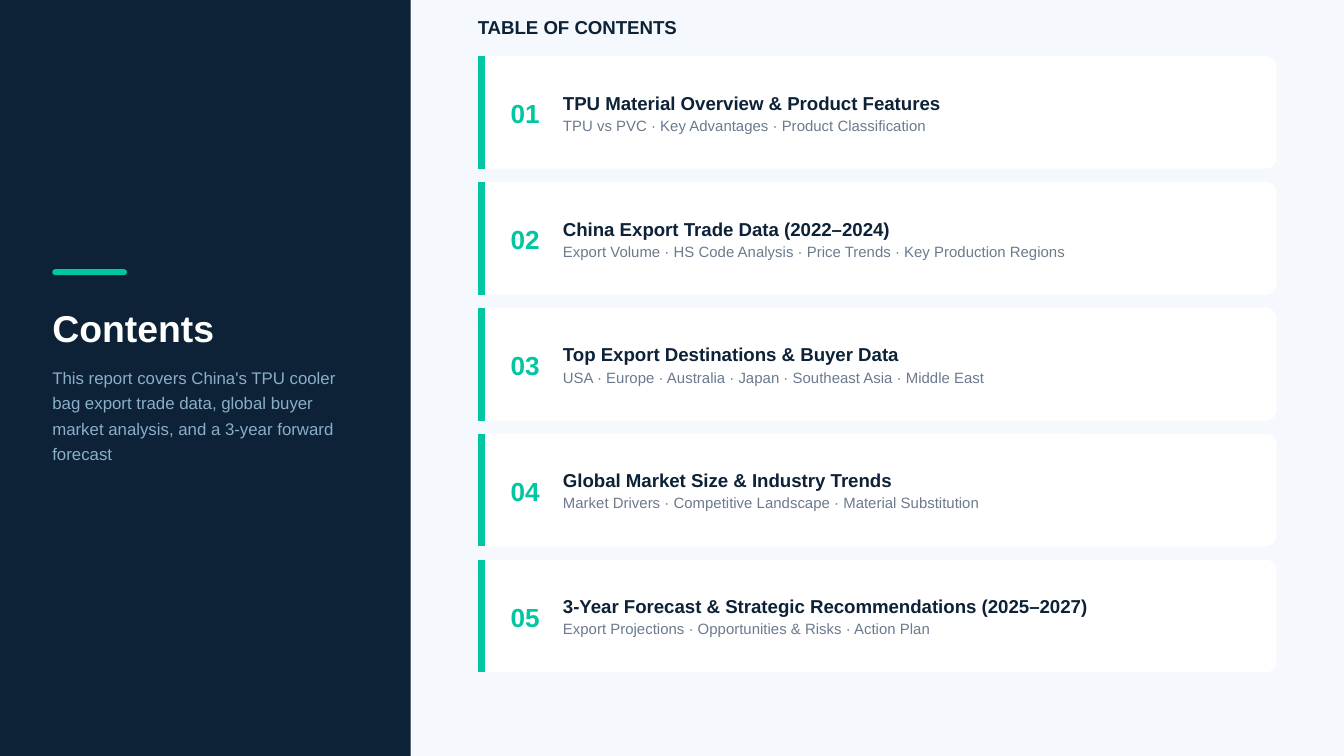
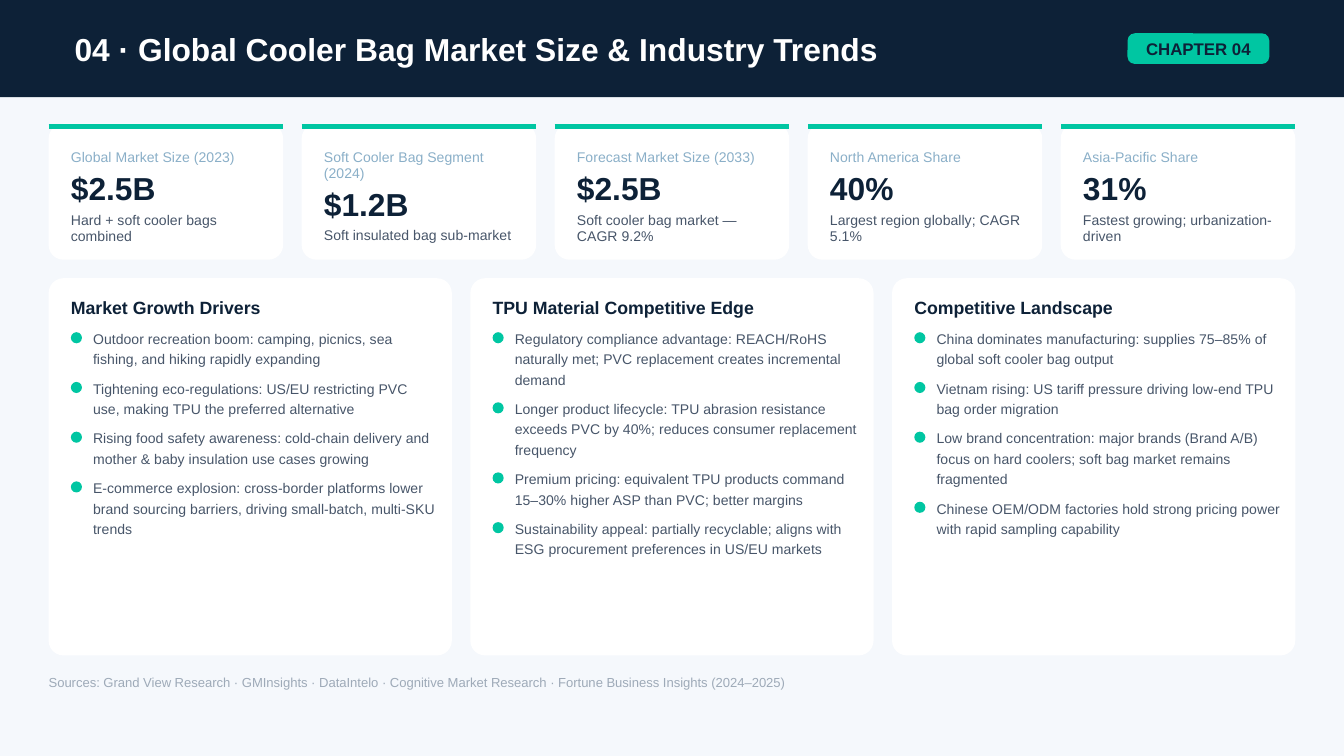
import collections

import lxml.etree
import pptx
import pptx.dml.color
import pptx.enum.shapes
import pptx.oxml.ns
import pptx.util

Cm = pptx.util.Cm
Pt = pptx.util.Pt
Area = collections.namedtuple("Area", "left top width height")

FONT = "Arial"
NAVY, TEAL, WHITE, PALE = "0D2137", "00C6A2", "FFFFFF", "F5F8FC"
SKY, SLATE, GREY, MIST = "8AAFC8", "475569", "6B7A8D", "9EAAB8"
SLIDE = Area(0, 0, 25.4, 14.29)

# Title, topics, width of the text column
CHAPTERS = [
    ("TPU Material Overview & Product Features",
     "TPU vs PVC · Key Advantages · Product Classification", 7.3),
    ("China Export Trade Data (2022–2024)",
     "Export Volume · HS Code Analysis · Price Trends · Key Production Regions", 9.65),
    ("Top Export Destinations & Buyer Data",
     "USA · Europe · Australia · Japan · Southeast Asia · Middle East", 8.1),
    ("Global Market Size & Industry Trends",
     "Market Drivers · Competitive Landscape · Material Substitution", 8),
    ("3-Year Forecast & Strategic Recommendations (2025–2027)",
     "Export Projections · Opportunities & Risks · Action Plan", 10.13),
]

# Label, label lines, value, note, note lines
STATS = [
    ("Global Market Size (2023)", 1, "$2.5B", "Hard + soft cooler bags combined", 2),
    ("Soft Cooler Bag Segment (2024)", 2, "$1.2B", "Soft insulated bag sub-market", 1),
    ("Forecast Market Size (2033)", 1, "$2.5B", "Soft cooler bag market — CAGR 9.2%", 2),
    ("North America Share", 1, "40%", "Largest region globally; CAGR 5.1%", 2),
    ("Asia-Pacific Share", 1, "31%", "Fastest growing; urbanization-driven", 2),
]

# Heading, then each point with its number of lines
PANELS = [
    ("Market Growth Drivers", [
        ("Outdoor recreation boom: camping, picnics, sea fishing, and hiking "
         "rapidly expanding", 2),
        ("Tightening eco-regulations: US/EU restricting PVC use, making TPU "
         "the preferred alternative", 2),
        ("Rising food safety awareness: cold-chain delivery and mother & baby "
         "insulation use cases growing", 2),
        ("E-commerce explosion: cross-border platforms lower brand sourcing "
         "barriers, driving small-batch, multi-SKU trends", 3),
    ]),
    ("TPU Material Competitive Edge", [
        ("Regulatory compliance advantage: REACH/RoHS naturally met; PVC "
         "replacement creates incremental demand", 3),
        ("Longer product lifecycle: TPU abrasion resistance exceeds PVC by 40%; "
         "reduces consumer replacement frequency", 3),
        ("Premium pricing: equivalent TPU products command 15–30% higher ASP "
         "than PVC; better margins", 2),
        ("Sustainability appeal: partially recyclable; aligns with ESG "
         "procurement preferences in US/EU markets", 2),
    ]),
    ("Competitive Landscape", [
        ("China dominates manufacturing: supplies 75–85% of global soft cooler "
         "bag output", 2),
        ("Vietnam rising: US tariff pressure driving low-end TPU bag order "
         "migration", 2),
        ("Low brand concentration: major brands (Brand A/B) focus on hard "
         "coolers; soft bag market remains fragmented", 3),
        ("Chinese OEM/ODM factories hold strong pricing power with rapid "
         "sampling capability", 2),
    ]),
]


def color(value):
    return pptx.dml.color.RGBColor.from_string(value)


def inside(area, left, top, width, height):
    """Return an area whose corner is measured from the corner of another."""
    return Area(area.left + left, area.top + top, width, height)


def columns(area, count, gap):
    width = (area.width - gap * (count - 1)) / count
    return [inside(area, i * (width + gap), 0, width, area.height) for i in range(count)]


def add_text(page, area, text, size=7.5, ink=SLATE, bold=False, leading=None, wrap=True):
    box = page.shapes.add_textbox(*map(Cm, area))
    frame = box.text_frame
    frame.word_wrap = wrap
    frame.margin_left = frame.margin_right = frame.margin_top = frame.margin_bottom = 0
    para = frame.paragraphs[0]
    if leading:
        para.line_spacing = Pt(leading)
    span = para.add_run()
    span.text = text
    span.font.name = FONT
    span.font.size = Pt(size)
    span.font.bold = bold
    span.font.color.rgb = color(ink)


def add_block(page, area, fill, radius=0):
    kinds = pptx.enum.shapes.MSO_SHAPE
    kind = kinds.ROUNDED_RECTANGLE if radius else kinds.RECTANGLE
    shape = page.shapes.add_shape(kind, *map(Cm, area))
    if radius:
        shape.adjustments[0] = min(0.5, radius / min(area.width, area.height))
    shape.shadow.inherit = False
    shape.fill.solid()
    shape.fill.fore_color.rgb = color(fill)
    shape.line.fill.background()


def add_accent_line(page, start, end, weight):
    straight = pptx.enum.shapes.MSO_CONNECTOR.STRAIGHT
    line = page.shapes.add_connector(straight, *map(Cm, start + end))
    line.line.color.rgb = color(TEAL)
    line.line.width = Pt(weight)
    effects = pptx.oxml.ns.qn("a:effectLst")
    lxml.etree.SubElement(line._element.spPr, effects)


def add_page(deck):
    page = deck.slides.add_slide(deck.slide_layouts[6])
    page.background.fill.solid()
    page.background.fill.fore_color.rgb = color(PALE)
    return page


def intro_panel(page, area):
    add_block(page, area, NAVY)
    add_block(page, inside(area, 0.99, 5.09, 1.41, 0.11), TEAL, radius=0.07)
    add_text(page, inside(area, 0.99, 5.76, 5.9, 0.81), "Contents",
             size=20, ink=WHITE, bold=True)
    add_text(page, inside(area, 0.99, 6.86, 5.9, 1.9),
             "This report covers China's TPU cooler bag export trade data, global "
             "buyer market analysis, and a 3-year forward forecast",
             size=9, ink=SKY, leading=13.5)


def chapter_card(page, area, number, title, topics, text_width):
    add_block(page, area, WHITE, radius=0.21)
    x = area.left + 0.07
    add_accent_line(page, (x, area.top), (x, area.top + area.height), 3.75)
    add_text(page, inside(area, 0.62, 0.78, 1, 0.58), f"{number:02}",
             size=14, ink=TEAL, bold=True)
    add_text(page, inside(area, 1.61, 0.67, text_width, 0.41), title,
             size=10, ink=NAVY, bold=True)
    add_text(page, inside(area, 1.61, 1.14, text_width, 0.3), topics, size=8, ink=GREY)


def chapter_list(page, area):
    add_text(page, inside(area, 0, 0, 15.4, 0.41), "TABLE OF CONTENTS",
             size=10, ink=NAVY, bold=True)
    card_height, pitch = 2.13, 2.38
    for index, chapter in enumerate(CHAPTERS):
        card = inside(area, 0, 0.76 + index * pitch, area.width, card_height)
        chapter_card(page, card, index + 1, *chapter)


def header(page, area, title, tag):
    add_block(page, area, NAVY)
    add_text(page, inside(area, 1.41, 0.56, 15.47, 0.71), title,
             size=17, ink=WHITE, bold=True)
    pill = inside(area, 21.31, 0.63, 2.68, 0.58)
    add_block(page, pill, TEAL, radius=0.14)
    add_text(page, inside(pill, 0.35, 0.1, 2, 0.38), tag,
             size=9, ink=NAVY, bold=True, wrap=False)


def stat_card(page, area, label, label_lines, value, note, note_lines):
    line_height, text_width = 0.29, 3.66
    add_block(page, area, WHITE, radius=0.28)
    y = area.top + 0.05
    add_accent_line(page, (area.left, y), (area.left + area.width, y), 3)
    add_text(page, inside(area, 0.42, 0.46, text_width, label_lines * line_height),
             label, ink=SKY)
    below = inside(area, 0.42, 0.57 + label_lines * line_height, text_width, 0.71)
    add_text(page, below, value, size=17, ink=NAVY, bold=True)
    add_text(page, inside(below, 0, 0.79, text_width, note_lines * line_height), note)


def bullet_panel(page, area, heading, points):
    leading, line_height, gap = 10.9, 0.385, 0.17
    add_block(page, area, WHITE, radius=0.28)
    add_text(page, inside(area, 0.42, 0.36, 6.9, 0.38), heading,
             size=9.5, ink=NAVY, bold=True)
    top = 0.92
    for text, lines in points:
        height = lines * line_height
        add_block(page, inside(area, 0.42, top + 0.1, 0.21, 0.21), TEAL, radius=0.11)
        add_text(page, inside(area, 0.84, top, 6.5, height), text, leading=leading)
        top += height + gap


def contents_slide(deck):
    page = add_page(deck)
    intro_panel(page, SLIDE._replace(width=7.76))
    chapter_list(page, Area(9.03, 0.3, 15.1, 12.41))


def market_slide(deck):
    page = add_page(deck)
    header(page, SLIDE._replace(height=1.84),
           "04 · Global Cooler Bag Market Size & Industry Trends", "CHAPTER 04")
    body = Area(0.92, 2.34, 23.56, 10.05)
    gap = 0.35
    for area, stat in zip(columns(body._replace(height=2.57), len(STATS), gap), STATS):
        stat_card(page, area, *stat)
    lower = inside(body, 0, 2.92, body.width, 7.13)
    for area, panel in zip(columns(lower, len(PANELS), gap), PANELS):
        bullet_panel(page, area, *panel)
    add_text(page, inside(body, 0, 10.41, 24.03, 0.25),
             "Sources: Grand View Research · GMInsights · DataIntelo · Cognitive Market "
             "Research · Fortune Business Insights (2024–2025)", size=7, ink=MIST)


def main():
    deck = pptx.Presentation()
    deck.slide_width, deck.slide_height = Cm(SLIDE.width), Cm(SLIDE.height)
    contents_slide(deck)
    market_slide(deck)
    deck.save("out.pptx")


if __name__ == "__main__":
    main()
